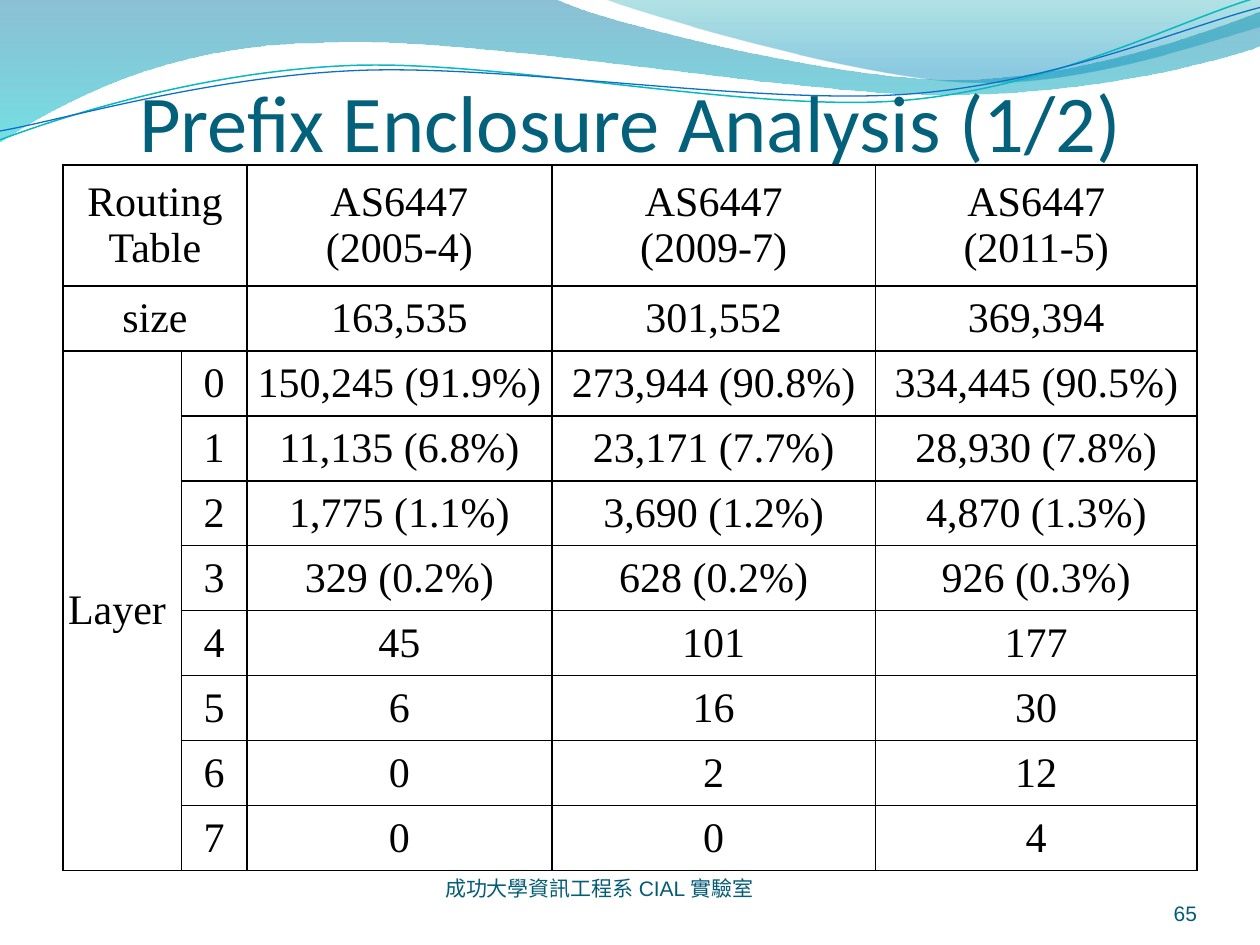
import math

import lxml.etree
import pptx
import pptx.dml.color
import pptx.enum.text
import pptx.oxml.ns
import pptx.util

Inches = pptx.util.Inches
Pt = pptx.util.Pt
qn = pptx.oxml.ns.qn
ALIGN = pptx.enum.text.PP_ALIGN
ANCHOR = pptx.enum.text.MSO_ANCHOR

COLORS = {
    "title": "04617B", "footer": "045C75", "black": "000000",
    "deep": "0074A1", "aqua": "00C6CF", "teal": "00A1A9", "sky": "008BBF",
    "cyan_line": "0AB8BF", "blue_line": "0F6FC6",
}
CJK = "Noto Sans CJK SC"
TILT = -2.7


def rgb(name):
    return pptx.dml.color.RGBColor.from_string(COLORS[name])


def turn(point, center, degrees):
    """Return the point turned clockwise about the center."""
    a = math.radians(degrees)
    dx, dy = point[0] - center[0], point[1] - center[1]
    return (center[0] + dx * math.cos(a) - dy * math.sin(a),
            center[1] + dx * math.sin(a) + dy * math.cos(a))


class Deck:
    """Draws styled elements on the current slide."""

    def __init__(self, prs):
        self.s = prs.slides.add_slide(prs.slide_layouts[6])

    def wave(self, start, parts, closed):
        xy = [(Inches(x), Inches(y)) for x, y in [start, *sum(parts, [])]]
        builder = self.s.shapes.build_freeform(*xy[0], scale=1.0)
        builder.add_line_segments(xy[1:], close=closed)
        sp = builder.convert_to_shape()
        sp.shadow.inherit = False
        segments = iter(list(sp._element.iter(qn("a:lnTo"))))
        for part in parts:
            group = [next(segments) for _ in part]
            if len(group) == 3:
                cubic = lxml.etree.Element(qn("a:cubicBezTo"))
                group[0].addprevious(cubic)
                for segment in group:
                    cubic.append(segment[0])
                    segment.getparent().remove(segment)
        return sp

    def band(self, stops, start, *parts):
        sp = self.wave(start, parts, True)
        sp.line.fill.background()
        sp.fill.gradient()
        sp.fill.gradient_angle = 270
        for stop, (position, color, opacity) in zip(sp.fill.gradient_stops, stops):
            stop.position = position
            stop.color.rgb = rgb(color)
            clr = sp.fill._xPr.findall(".//" + qn("a:srgbClr"))[-1]
            lxml.etree.SubElement(clr, qn("a:alpha"), val=str(opacity * 1000))

    def curve(self, color, width, center, start, *parts):
        level = [[turn(point, center, -TILT) for point in part] for part in parts]
        sp = self.wave(turn(start, center, -TILT), level, False)
        sp.rotation = TILT
        sp.fill.background()
        sp.line.color.rgb = rgb(color)
        sp.line.width = Pt(width)

    def text(self, box, runs, size, color, align, anchor, top=0):
        tf = self.s.shapes.add_textbox(*map(Inches, box)).text_frame
        tf.word_wrap = True
        tf.vertical_anchor = anchor
        tf.margin_left = tf.margin_right = tf.margin_bottom = 0
        tf.margin_top = Inches(top)
        p = tf.paragraphs[0]
        p.alignment = align
        p.font.size = Pt(size)
        p.font.color.rgb = rgb(color)
        for words, font in runs:
            r = p.add_run()
            r.text = words
            r.font.name = font
            if font == CJK:
                lxml.etree.SubElement(r.font._element, qn("a:ea"), typeface=font)

    def cell(self, cell, words):
        cell.margin_left = cell.margin_right = cell.margin_top = cell.margin_bottom = 0
        cell.vertical_anchor = ANCHOR.MIDDLE
        tcPr = cell._tc.get_or_add_tcPr()
        for side in ("a:lnL", "a:lnR", "a:lnT", "a:lnB"):
            ln = lxml.etree.SubElement(tcPr, qn(side), w=str(Pt(1)))
            fill = lxml.etree.SubElement(ln, qn("a:solidFill"))
            lxml.etree.SubElement(fill, qn("a:srgbClr"), val=COLORS["black"])
        cell.fill.background()
        cell.text = words
        for p in cell.text_frame.paragraphs:
            p.alignment = ALIGN.CENTER
            pPr = p._p.get_or_add_pPr()
            pPr.set("marL", str(Inches(0.3)))
            pPr.set("indent", str(Inches(-0.3)))
            p.font.name = "Times New Roman"
            p.font.size = Pt(24)
            p.font.color.rgb = rgb("black")

    def table(self, box, widths, header_height, rows, merges):
        frame = self.s.shapes.add_table(len(rows), len(widths), *map(Inches, box))
        tbl = frame.table
        tbl.first_row = tbl.horz_banding = False
        for col, width in zip(tbl.columns, widths):
            col.width = Inches(width)
        for row in tbl.rows:
            row.height = Inches((box[3] - header_height) / (len(rows) - 1))
        tbl.rows[0].height = Inches(header_height)
        for i, values in enumerate(rows):
            for j, words in enumerate(values):
                self.cell(tbl.cell(i, j), words)
        for first, last in merges:
            tbl.cell(*first).merge(tbl.cell(*last))


def main():
    prs = pptx.Presentation()
    prs.slide_width, prs.slide_height = Inches(10), Inches(7.5)
    deck = Deck(prs)

    deck.band([(0, "deep", 45), (1, "aqua", 55)], (0, -0.01), [(4.4, -0.01)],
              [(4.76, 0.17), (6.64, 0.63), (7.58, 0.63)],
              [(8.53, 0.63), (9.58, 0.26), (10, 0.09)], [(10.01, 0.36)],
              [(9.83, 0.44), (8.7, 0.76), (7.46, 0.75)],
              [(6.22, 0.75), (3.82, 0.28), (2.57, 0.34)],
              [(1.29, 0.35), (0.46, 0.83), (-0.01, 1.13)], [(0, -0.01)])
    deck.band([(0, "teal", 30), (0.8, "sky", 45)], (4.79, -0.01),
              [(5.09, 0.11), (6.82, 0.62), (7.69, 0.65)],
              [(8.56, 0.69), (9.61, 0.32), (10, 0.21)], [(10, 0)], [(4.79, -0.01)])
    deck.curve("cyan_line", 0.85, (4.99, 0.58), (0, 1.11),
               [(0.48, 0.93), (1.58, 0.57), (2.77, 0.52)],
               [(3.95, 0.47), (5.93, 0.89), (7.13, 0.8)],
               [(8.33, 0.71), (9.38, 0.15), (9.98, -0.02)])
    deck.curve("blue_line", 0.75, (5, 0.59), (0, 1.04),
               [(0.47, 0.96), (1.64, 0.61), (2.83, 0.56)],
               [(4.03, 0.51), (5.97, 0.83), (7.17, 0.75)],
               [(8.36, 0.67), (9.41, 0.21), (10, 0.06)])

    deck.text((2.92, 6.95, 3.67, 0.4),
              [("成功大學資訊工程系 ", CJK), ("CIAL", "Arial"), (" 實驗室", CJK)],
              12, "footer", ALIGN.CENTER, ANCHOR.TOP)
    deck.text((8.67, 6.95, 0.83, 0.4), [("65", "Arial")],
              12, "footer", ALIGN.RIGHT, ANCHOR.BOTTOM)
    deck.text((0.5, 0.49, 9, 0.85), [("Prefix Enclosure Analysis (1/2)", "Calibri")],
              46, "title", ALIGN.CENTER, ANCHOR.BOTTOM, top=0.05)

    layers = [
        ("150,245 (91.9%)", "273,944 (90.8%)", "334,445 (90.5%)"),
        ("11,135 (6.8%)", "23,171 (7.7%)", "28,930 (7.8%)"),
        ("1,775 (1.1%)", "3,690 (1.2%)", "4,870 (1.3%)"),
        ("329 (0.2%)", "628 (0.2%)", "926 (0.3%)"),
        ("45", "101", "177"),
        ("6", "16", "30"),
        ("0", "2", "12"),
        ("0", "0", "4"),
    ]
    rows = [("Routing\nTable", "", "AS6447\n(2005-4)", "AS6447\n(2009-7)", "AS6447\n(2011-5)"),
            ("size", "", "163,535", "301,552", "369,394")]
    rows += [("" if n else "Layer ", str(n), *values) for n, values in enumerate(layers)]
    deck.table((0.5, 1.31, 9, 5.6), (0.94, 0.52, 2.42, 2.57, 2.55), 0.96, rows,
               [((0, 0), (0, 1)), ((1, 0), (1, 1)), ((2, 0), (9, 0))])
    prs.save("out.pptx")


if __name__ == "__main__":
    main()
